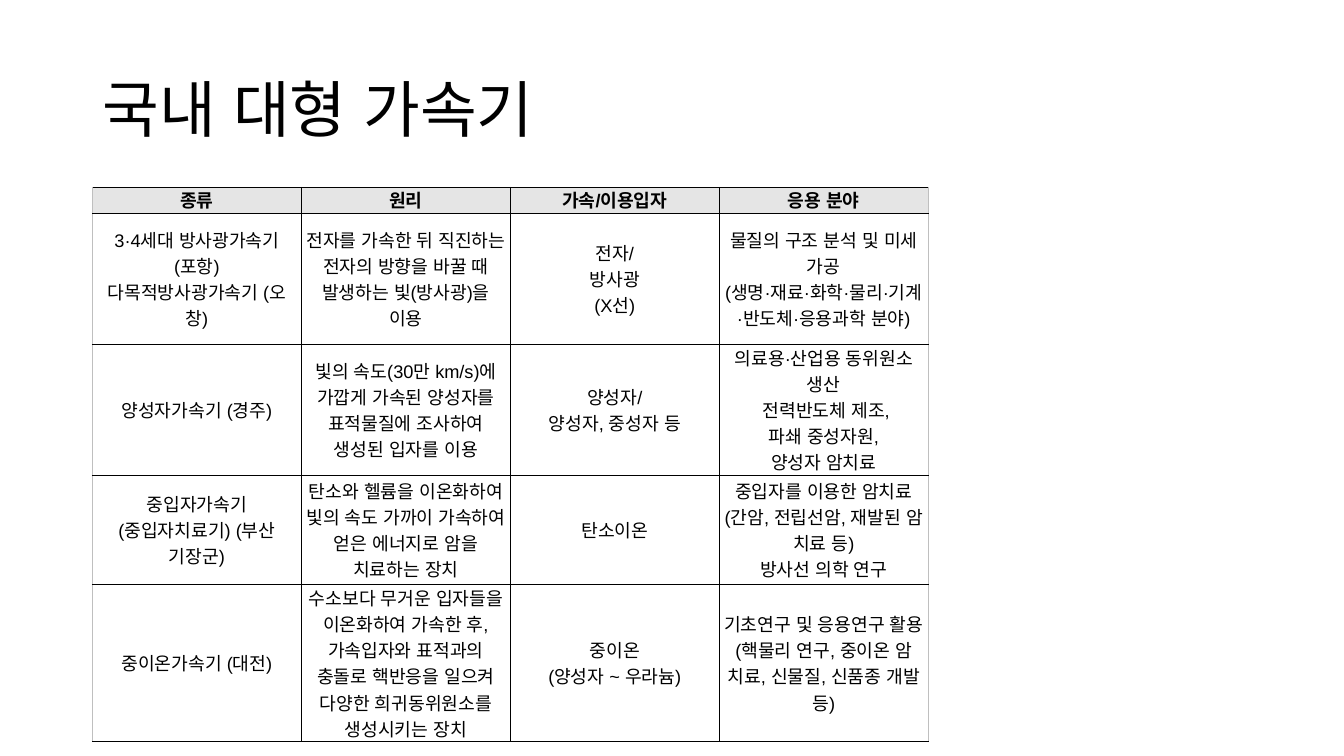
from lxml import etree
from pptx import Presentation
from pptx import util as u
from pptx.dml.color import RGBColor
from pptx.enum import lang, text
from pptx.oxml.ns import qn

PX = 9525
THEME = {
    "ink": "000000", "header": "E5E5E5", "edge": "BFBFBF",
    "title_font": "Calibri", "table_font": "Arial",
    "title_size": 44, "table_size": 13,
    "rule_width": 0.23, "edge_width": 0.75,
}


def add_span(para, words, font, size, bold=False):
    span = para.add_run()
    span.text = words
    span.font.name = font
    span.font.size = u.Pt(size)
    span.font.bold = bold
    span.font.language_id = lang.MSO_LANGUAGE_ID.KOREAN
    span.font.color.rgb = RGBColor.from_string(THEME["ink"])


def add_border(cell, side, color, width):
    line = etree.SubElement(cell._tc.get_or_add_tcPr(), qn(f"a:ln{side}"), w=str(u.Pt(width)))
    fill = etree.SubElement(line, qn("a:solidFill"))
    etree.SubElement(fill, qn("a:srgbClr"), val=color)


deck = Presentation()
deck.slide_width = 1280 * PX
deck.slide_height = 720 * PX
page = deck.slides.add_slide(deck.slide_layouts[5])

title = page.shapes.title
title.left, title.top, title.width, title.height = [n * PX for n in (88, 38, 1104, 139)]
title.text_frame.vertical_anchor = text.MSO_ANCHOR.MIDDLE
para = title.text_frame.paragraphs[0]
para.alignment = text.PP_ALIGN.LEFT
para.line_spacing = 0.9
add_span(para, "국내 대형 가속기", THEME["title_font"], THEME["title_size"])

accelerators = [
    [["종류"], ["원리"], ["가속/이용입자"], ["응용 분야"]],
    [
        ["3·4세대 방사광가속기 (포항)", "다목적방사광가속기 (오창)"],
        ["전자를 가속한 뒤 직진하는 전자의 방향을 바꿀 때 발생하는 빛(방사광)을 이용"],
        ["전자/", "방사광", "(X선)"],
        ["물질의 구조 분석 및 미세 가공", "(생명·재료·화학·물리·기계·반도체·응용과학 분야)"],
    ],
    [
        ["양성자가속기 (경주)"],
        ["빛의 속도(30만 km/s)에 가깝게 가속된 양성자를 표적물질에 조사하여 생성된 입자를 이용"],
        ["양성자/", "양성자, 중성자 등"],
        ["의료용·산업용 동위원소 생산", " 전력반도체 제조,", " 파쇄 중성자원, ", "양성자 암치료"],
    ],
    [
        ["중입자가속기 (중입자치료기) (부산 기장군)"],
        ["탄소와 헬륨을 이온화하여 빛의 속도 가까이 가속하여 얻은 에너지로 암을 치료하는 장치"],
        ["탄소이온"],
        ["중입자를 이용한 암치료", "(간암, 전립선암, 재발된 암 치료 등)", "방사선 의학 연구"],
    ],
    [
        ["중이온가속기 (대전)"],
        ["수소보다 무거운 입자들을 이온화하여 가속한 후, 가속입자와 표적과의 충돌로 "
         "핵반응을 일으켜 다양한 희귀동위원소를 생성시키는 장치"],
        ["중이온", "(양성자 ~ 우라늄)"],
        ["기초연구 및 응용연구 활용(핵물리 연구, 중이온 암 치료, 신물질, 신품종 개발 등)"],
    ],
]
row_heights = [21, 84, 104, 104, 145]
column_width = 199
column_count = len(accelerators[0])

frame = page.shapes.add_table(
    len(accelerators), column_count, 88 * PX, 178 * PX,
    column_count * column_width * PX, sum(row_heights) * PX)
table = frame.table
for column in table.columns:
    column.width = column_width * PX
for row, height in zip(table.rows, row_heights):
    row.height = height * PX

for r, entries in enumerate(accelerators):
    for c, lines in enumerate(entries):
        cell = table.cell(r, c)
        cell.vertical_anchor = text.MSO_ANCHOR.MIDDLE
        cell.margin_left = cell.margin_right = 4 * PX
        cell.margin_top = cell.margin_bottom = 0
        for side in "LRTB":
            outer = (side, c) in (("L", 0), ("R", column_count - 1))
            color = THEME["edge"] if outer else THEME["ink"]
            width = THEME["edge_width"] if outer else THEME["rule_width"]
            add_border(cell, side, color, width)
        if r == 0:
            cell.fill.solid()
            cell.fill.fore_color.rgb = RGBColor.from_string(THEME["header"])
        else:
            cell.fill.background()
        box = cell.text_frame
        for i, words in enumerate(lines):
            para = box.add_paragraph() if i else box.paragraphs[0]
            para.alignment = text.PP_ALIGN.CENTER
            add_span(para, words, THEME["table_font"], THEME["table_size"], bold=r == 0)

deck.save("out.pptx")
